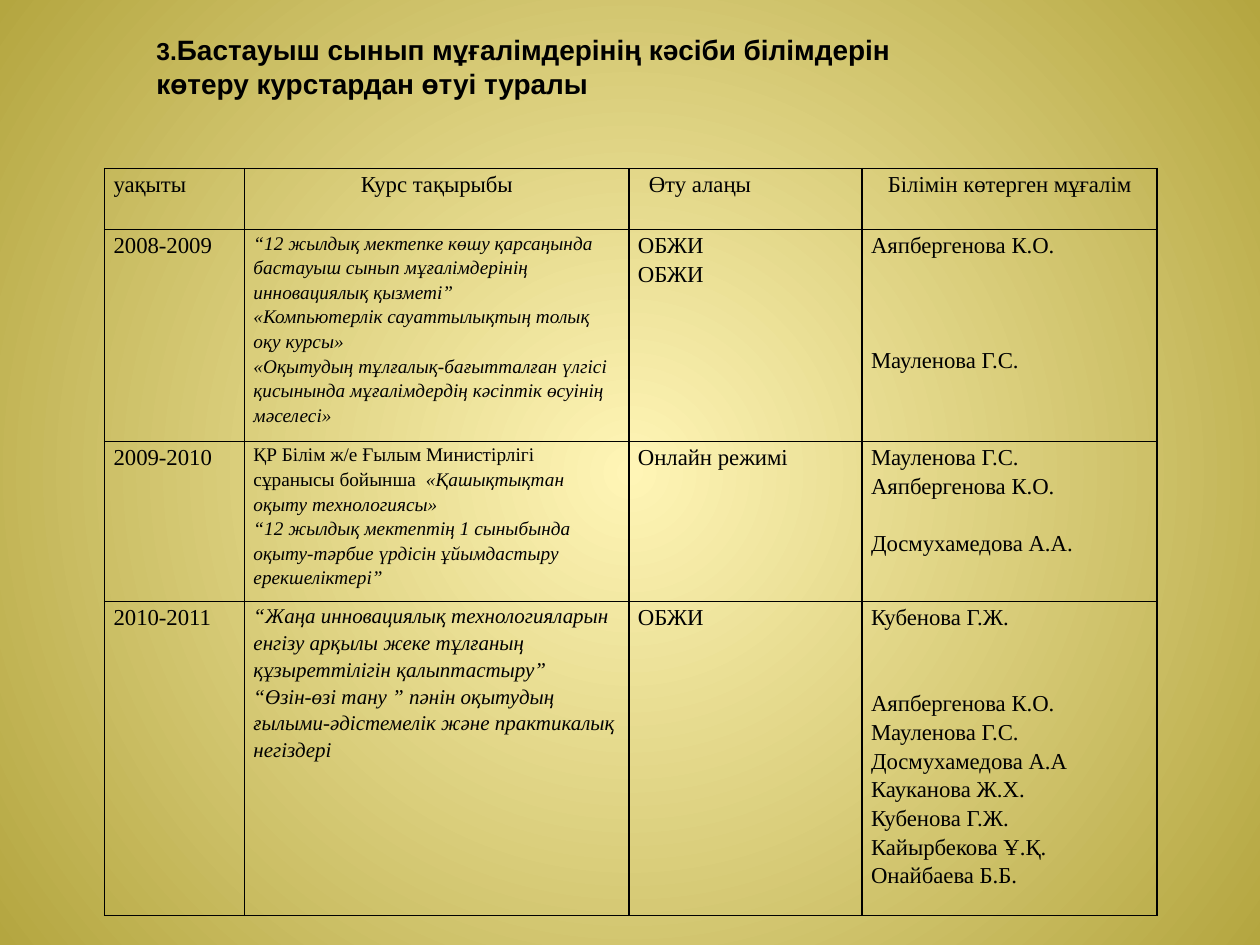
from lxml.etree import SubElement
from pptx import Presentation
from pptx.dml.color import RGBColor
from pptx.enum.text import MSO_ANCHOR as Anchor, MSO_AUTO_SIZE as AutoSize, PP_ALIGN as Align
from pptx.oxml.ns import qn
from pptx.util import Cm, Pt

BLACK = RGBColor(0x00, 0x00, 0x00)
CREAM = RGBColor(0xFF, 0xF5, 0xB6)
OLIVE = RGBColor(0xB4, 0xA6, 0x40)
LINE_HEIGHT = 16.4  # points taken by one 13 pt table line

COLUMN_WIDTHS = [2.82, 7.75, 4.7, 5.94]
ROW_HEIGHTS = [1.23, 4.27, 3.23, 6.33]
HEADINGS = [("уақыты", Align.LEFT), ("Курс тақырыбы", Align.CENTER),
            ("Өту алаңы", Align.LEFT), ("Білімін көтерген мұғалім", Align.CENTER)]

# period, topic size, topics as (upright text, italic text), places,
# teachers as (name, lines left free above)
COURSES = [
    ("2008-2009", 11,
     [("", "“12 жылдық мектепке көшу қарсаңында бастауыш сынып мұғалімдерінің инновациялық қызметі”"),
      ("", "«Компьютерлік сауаттылықтың толық оқу курсы»"),
      ("", "«Оқытудың тұлғалық-бағытталған үлгісі қисынында мұғалімдердің кәсіптік өсуінің мәселесі»")],
     ["ОБЖИ", "ОБЖИ"],
     [("Аяпбергенова К.О.", 0), ("Мауленова Г.С.", 3)]),
    ("2009-2010", 11,
     [("ҚР Білім ж/е Ғылым Министірлігі сұранысы бойынша  ", "«Қашықтықтан оқыту технологиясы»"),
      ("", "“12 жылдық мектептің 1 сыныбында оқыту-тәрбие үрдісін ұйымдастыру ерекшеліктері”")],
     ["Онлайн режимі"],
     [("Мауленова Г.С.", 0), ("Аяпбергенова К.О.", 0), ("Досмухамедова А.А.", 1)]),
    ("2010-2011", 12,
     [("", "“Жаңа инновациялық технологияларын енгізу арқылы жеке тұлғаның құзыреттілігін қалыптастыру”"),
      ("", "“Өзін-өзі тану ” пәнін оқытудың ғылыми-әдістемелік және практикалық негіздері")],
     ["ОБЖИ"],
     [("Кубенова Г.Ж.", 0), ("Аяпбергенова К.О. Мауленова Г.С.", 2), ("Досмухамедова А.А", 0),
      ("Кауканова Ж.Х.", 0), ("Кубенова Г.Ж.", 0), ("Кайырбекова Ұ.Қ.", 0), ("Онайбаева Б.Б.", 0)]),
]


def add_span(para, text, size, font="Times New Roman", bold=False, italic=False):
    span = para.add_run()
    span.text = text
    span.font.name, span.font.size = font, Pt(size)
    span.font.bold, span.font.italic = bold, italic
    span.font.color.rgb = BLACK


def next_para(cell, free_lines=0):
    """Return the cell's first paragraph while it is unused, else a new one."""
    para = cell.text_frame.paragraphs[0]
    if para.runs:
        para = cell.text_frame.add_paragraph()
    para.line_spacing = 1.15
    para.space_before = Pt(free_lines * LINE_HEIGHT)
    return para


deck = Presentation()
deck.slide_width, deck.slide_height = Cm(25.4), Cm(19.05)
page = deck.slides.add_slide(deck.slide_layouts[5])

# Background: light centre, darker rim
backdrop = page.background.fill
backdrop.gradient()
for stop, colour in zip(backdrop.gradient_stops, (CREAM, OLIVE)):
    stop.color.rgb = colour
gradient = page._element.find(".//" + qn("a:gradFill"))
gradient.remove(gradient.find(qn("a:lin")))
circle = SubElement(gradient, qn("a:path"), path="circle")
SubElement(circle, qn("a:fillToRect"), l="50000", t="50000", r="50000", b="50000")

# Title
title = page.shapes.title
title.left, title.top, title.width, title.height = Cm(2.9), Cm(0.53), Cm(16.5), Cm(2.39)
frame = title.text_frame
frame.auto_size = AutoSize.NONE
frame.vertical_anchor = Anchor.TOP
heading = frame.paragraphs[0]
add_span(heading, "3.", 14, "Arial", bold=True)
add_span(heading, "Бастауыш сынып мұғалімдерінің кәсіби білімдерін", 16, "Arial", bold=True)
add_span(frame.add_paragraph(), "көтеру курстардан өтуі туралы", 16, "Arial", bold=True)
for para in frame.paragraphs:
    para.alignment = Align.LEFT

# Table grid
table = page.shapes.add_table(len(ROW_HEIGHTS), len(COLUMN_WIDTHS), Cm(2.11), Cm(3.4),
                              Cm(sum(COLUMN_WIDTHS)), Cm(sum(ROW_HEIGHTS))).table
table.first_row = table.horz_banding = False
for column, width in zip(table.columns, COLUMN_WIDTHS):
    column.width = Cm(width)
for row, height in zip(table.rows, ROW_HEIGHTS):
    row.height = Cm(height)
for cell in table.iter_cells():
    cell.margin_left = cell.margin_right = Cm(0.18)
    cell.margin_top = cell.margin_bottom = Cm(0)
    borders = cell._tc.get_or_add_tcPr()
    for side in ("a:lnL", "a:lnR", "a:lnT", "a:lnB"):
        line = SubElement(borders, qn(side), w=str(Pt(1)))
        SubElement(SubElement(line, qn("a:solidFill")), qn("a:srgbClr"), val=str(BLACK))
    cell.fill.background()

# Table text
for column, (text, alignment) in enumerate(HEADINGS):
    para = next_para(table.cell(0, column))
    para.alignment = alignment
    add_span(para, text, 13)
table.cell(0, 2).margin_left = Cm(0.4)

for row, (period, topic_size, topics, places, teachers) in enumerate(COURSES, start=1):
    period_cell, topic_cell, place_cell, teacher_cell = table.rows[row].cells
    add_span(next_para(period_cell), period, 13)
    for upright, slanted in topics:
        para = next_para(topic_cell)
        if upright:
            add_span(para, upright, topic_size)
        add_span(para, slanted, topic_size, italic=True)
    for place in places:
        add_span(next_para(place_cell), place, 13)
    for name, free_lines in teachers:
        add_span(next_para(teacher_cell, free_lines), name, 13)

deck.save("out.pptx")
